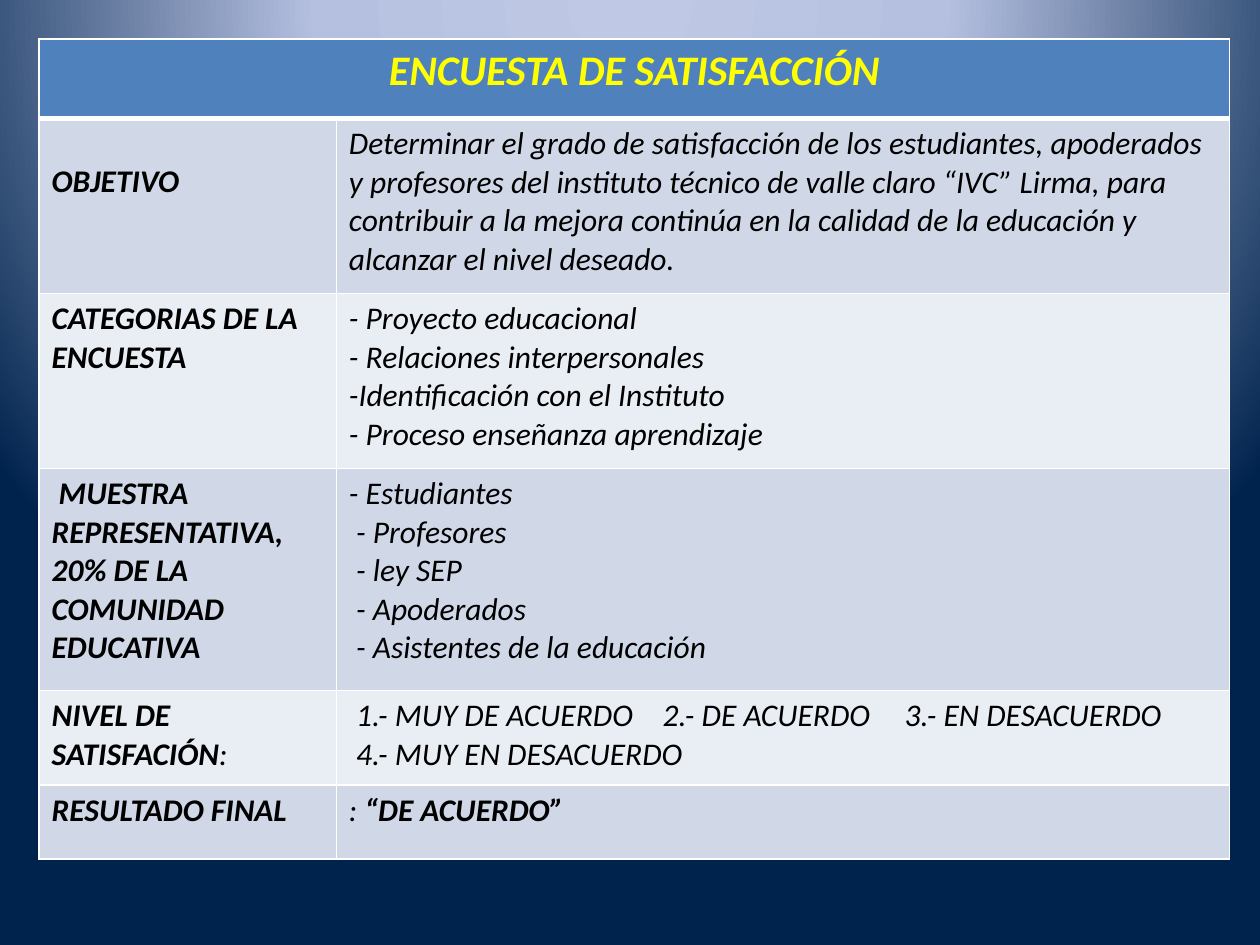
"""Build the satisfaction survey summary slide."""
from lxml.etree import SubElement
from pptx import Presentation
from pptx.dml.color import RGBColor
from pptx.enum.text import PP_ALIGN
from pptx.oxml import parse_xml
from pptx.oxml.ns import nsdecls, qn
from pptx.util import Inches, Pt

COLORS = {
    "header": "4F81BD", "title": "FFFF00", "text": "000000", "border": "FFFFFF",
    "odd": "D0D8E8", "even": "E9EDF4",
    "glow": "BFC9E5", "haze": "B5C0E0", "navy": "00234D",
}
COLUMN_WIDTHS = [2.36, 7.09]
ROW_HEIGHTS = [0.63, 1.39, 1.39, 1.76, 0.75, 0.59]
ANSWER_TABS = [2.49, 4.41]
TITLE = "ENCUESTA DE SATISFACCIÓN"
ROWS = [
    ([("OBJETIVO", True)],
     ["Determinar el grado de satisfacción de los estudiantes, apoderados y "
      "profesores del instituto técnico de valle claro “IVC” Lirma, para contribuir "
      "a la mejora continúa en la calidad de la educación y alcanzar el nivel deseado."]),
    ([("CATEGORIAS DE LA ENCUESTA", True)],
     ["- Proyecto educacional", "- Relaciones interpersonales",
      "-Identificación con el Instituto", "- Proceso enseñanza aprendizaje"]),
    ([(" MUESTRA REPRESENTATIVA, 20% DE LA COMUNIDAD EDUCATIVA", True)],
     ["- Estudiantes", " - Profesores", " - ley SEP", " - Apoderados",
      " - Asistentes de la educación"]),
    ([("NIVEL DE SATISFACIÓN", True), (":", False)],
     [" 1.- MUY DE ACUERDO\t2.- DE ACUERDO\t3.- EN DESACUERDO",
      " 4.- MUY EN DESACUERDO"]),
    ([("RESULTADO FINAL", True)],
     [[(": ", False), ("“DE ACUERDO”", True)]]),
]


def paint_background(slide):
    slide.background.fill.solid()
    solid = slide.element.find(".//" + qn("a:solidFill"))
    stops = "".join(
        f'<a:gs pos="{position * 1000}"><a:srgbClr val="{COLORS[name]}"/></a:gs>'
        for position, name in [(0, "glow"), (40, "haze"), (100, "navy")])
    gradient = parse_xml(
        f'<a:gradFill {nsdecls("a")} rotWithShape="1"><a:gsLst>{stops}</a:gsLst>'
        '<a:path path="circle"><a:fillToRect l="50000" t="-80000" r="50000" b="180000"/>'
        '</a:path></a:gradFill>')
    solid.getparent().replace(solid, gradient)


def style_cell(cell, fill, bottom=1, top=1):
    cell.fill.solid()
    cell.fill.fore_color.rgb = RGBColor.from_string(COLORS[fill])
    properties = cell._tc.get_or_add_tcPr()
    for index, (side, width) in enumerate(
            [("lnL", 1), ("lnR", 1), ("lnT", top), ("lnB", bottom)]):
        properties.insert(index, parse_xml(
            f'<a:{side} {nsdecls("a")} w="{Pt(width)}"><a:solidFill>'
            f'<a:srgbClr val="{COLORS["border"]}"/></a:solidFill></a:{side}>'))


def write_paragraph(para, spans, size=18, color="text"):
    for text, bold in spans:
        span = para.add_run()
        span.text = text
        font = span.font
        font.name, font.size = "Calibri", Pt(size)
        font.bold, font.italic = bold, True
        font.color.rgb = RGBColor.from_string(COLORS[color])


def write_lines(cell, lines):
    frame = cell.text_frame
    for index, line in enumerate(lines):
        para = frame.add_paragraph() if index else frame.paragraphs[0]
        write_paragraph(para, [(line, False)] if isinstance(line, str) else line)


def add_tab_stops(para, positions):
    tabs = SubElement(para._p.get_or_add_pPr(), qn("a:tabLst"))
    for position in positions:
        SubElement(tabs, qn("a:tab"), pos=str(Inches(position)), algn="l")


def add_survey_table(slide):
    table = slide.shapes.add_table(
        len(ROW_HEIGHTS), len(COLUMN_WIDTHS), Inches(0.31), Inches(0.31),
        Inches(sum(COLUMN_WIDTHS)), Inches(sum(ROW_HEIGHTS))).table
    for column, width in zip(table.columns, COLUMN_WIDTHS):
        column.width = Inches(width)
    for row, height in zip(table.rows, ROW_HEIGHTS):
        row.height = Inches(height)
    return table


def fill_header(table):
    header = table.cell(0, 0)
    header.merge(table.cell(0, 1))
    for cell in table.rows[0].cells:
        style_cell(cell, "header", bottom=3)
    para = header.text_frame.paragraphs[0]
    para.alignment = PP_ALIGN.CENTER
    write_paragraph(para, [(TITLE, True)], 24, "title")


def fill_rows(table):
    for number, (label, lines) in enumerate(ROWS, start=1):
        for cell, content in zip(table.rows[number].cells, ([label], lines)):
            style_cell(cell, "odd" if number % 2 else "even", top=3 if number == 1 else 1)
            write_lines(cell, content)
    table.cell(1, 0).margin_top = Inches(0.35)
    add_tab_stops(table.cell(4, 1).text_frame.paragraphs[0], ANSWER_TABS)


def main():
    deck = Presentation()
    deck.slide_width, deck.slide_height = Inches(10), Inches(7.5)
    page = deck.slides.add_slide(deck.slide_layouts[6])
    paint_background(page)
    table = add_survey_table(page)
    fill_header(table)
    fill_rows(table)
    deck.save("out.pptx")


if __name__ == "__main__":
    main()
